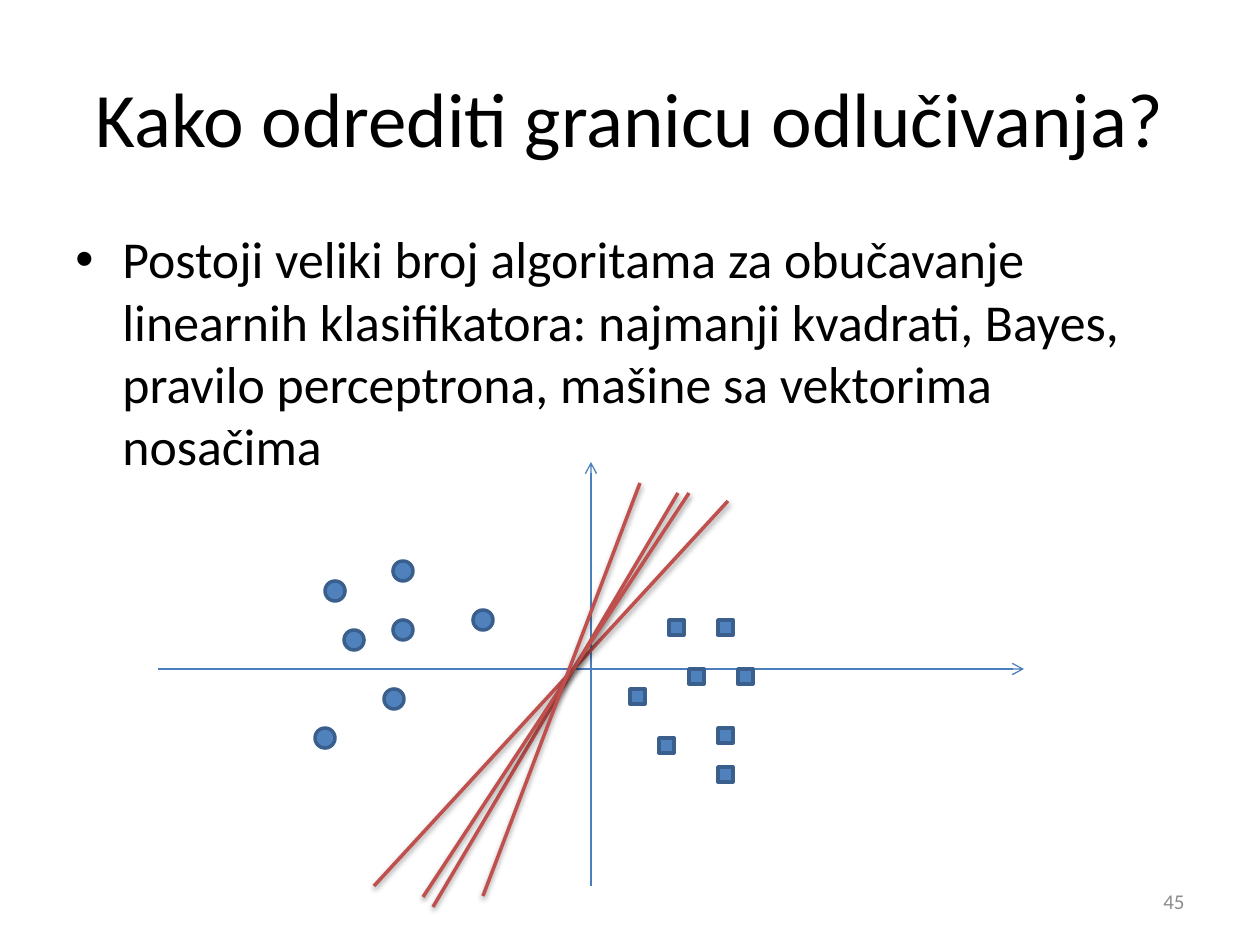
from dataclasses import dataclass

from lxml.etree import SubElement
from pptx import Presentation
from pptx.dml.color import RGBColor
from pptx.enum.shapes import MSO_CONNECTOR as Connector, MSO_SHAPE as Preset
from pptx.enum.text import MSO_ANCHOR as Anchor, PP_ALIGN as Align
from pptx.oxml.ns import qn
from pptx.util import Pt

EMU_PER_PX = 914400 / 126


@dataclass(frozen=True)
class Theme:
    font: str = "Calibri"
    text: str = "000000"
    muted: str = "8C8C8C"
    axis: str = "4B7EBC"
    marker: str = "4F81BD"
    marker_edge: str = "3A5F8C"
    boundary: str = "C0504D"
    title_size: float = 44
    body_size: float = 29.6
    number_size: float = 12
    thin: float = 0.75
    thick: float = 2


THEME = Theme()

CIRCLE_SIZE = 20
SQUARE_SIZE = 15
CIRCLES = [(325, 581), (393, 620), (384, 689), (473, 610), (393, 561), (344, 630), (315, 728)]
SQUARES = [(669, 620), (689, 669), (630, 689), (718, 620),
           (738, 669), (718, 767), (659, 738), (718, 728)]
AXES = [(158, 669, 1024, 669), (591, 886, 591, 462)]
BOUNDARIES = [(374, 886, 728, 501), (433, 907, 678, 493),
              (423, 897, 689, 493), (483, 896, 640, 483)]


def px(value):
    return round(value * EMU_PER_PX)


def color(value):
    return RGBColor.from_string(value)


def add_text(slide, box, text, size, fill, align=Align.LEFT, anchor=Anchor.MIDDLE):
    shape = slide.shapes.add_textbox(*map(px, box))
    frame = shape.text_frame
    frame.word_wrap = True
    frame.vertical_anchor = anchor
    frame.text = text
    paragraph = frame.paragraphs[0]
    paragraph.alignment = align
    font = paragraph.runs[0].font
    font.name = THEME.font
    font.size = Pt(size)
    font.color.rgb = color(fill)
    return paragraph


def add_bullet(paragraph, indent):
    properties = paragraph._p.get_or_add_pPr()
    properties.set("marL", str(px(indent)))
    properties.set("indent", str(-px(indent)))
    SubElement(properties, qn("a:buFont"), typeface="Arial")
    SubElement(properties, qn("a:buChar"), char="•")


def add_line(slide, ends, fill, width):
    connector = slide.shapes.add_connector(Connector.STRAIGHT, *map(px, ends))
    connector.line.color.rgb = color(fill)
    connector.line.width = Pt(width)
    effects = SubElement(connector._element.spPr, qn("a:effectLst"))
    return connector, effects


def add_axis(slide, ends):
    connector, _ = add_line(slide, ends, THEME.axis, THEME.thin)
    outline = connector._element.spPr.find(qn("a:ln"))
    SubElement(outline, qn("a:tailEnd"), type="arrow")


def add_boundary(slide, ends):
    _, effects = add_line(slide, ends, THEME.boundary, THEME.thick)
    shadow = SubElement(effects, qn("a:outerShdw"), blurRad=str(Pt(3.1)),
                        dist=str(Pt(1.6)), dir="5400000", rotWithShape="0")
    tint = SubElement(shadow, qn("a:srgbClr"), val=THEME.text)
    SubElement(tint, qn("a:alpha"), val="38000")


def add_marker(slide, preset, position, size):
    shape = slide.shapes.add_shape(preset, *map(px, (*position, size, size)))
    shape.shadow.inherit = False
    shape.fill.solid()
    shape.fill.fore_color.rgb = color(THEME.marker)
    shape.line.color.rgb = color(THEME.marker_edge)
    shape.line.width = Pt(THEME.thick)


def main():
    presentation = Presentation()
    presentation.slide_width, presentation.slide_height = px(1260), px(945)
    slide = presentation.slides.add_slide(presentation.slide_layouts[6])

    add_text(slide, (63, 38, 1134, 157), "Kako odrediti granicu odlučivanja?",
             THEME.title_size, THEME.text, Align.CENTER)
    body = add_text(
        slide, (63, 221, 1134, 232),
        "Postoji veliki broj algoritama za obučavanje linearnih klasifikatora: "
        "najmanji kvadrati, Bayes, pravilo perceptrona, mašine sa vektorima nosačima",
        THEME.body_size, THEME.text, anchor=Anchor.TOP)
    body.space_before = Pt(2)
    add_bullet(body, 47)

    for ends in AXES:
        add_axis(slide, ends)
    for position in CIRCLES:
        add_marker(slide, Preset.OVAL, position, CIRCLE_SIZE)
    for position in SQUARES:
        add_marker(slide, Preset.RECTANGLE, position, SQUARE_SIZE)
    for ends in BOUNDARIES:
        add_boundary(slide, ends)

    add_text(slide, (903, 876, 294, 50), "45", THEME.number_size, THEME.muted, Align.RIGHT)
    presentation.save("out.pptx")


if __name__ == "__main__":
    main()
